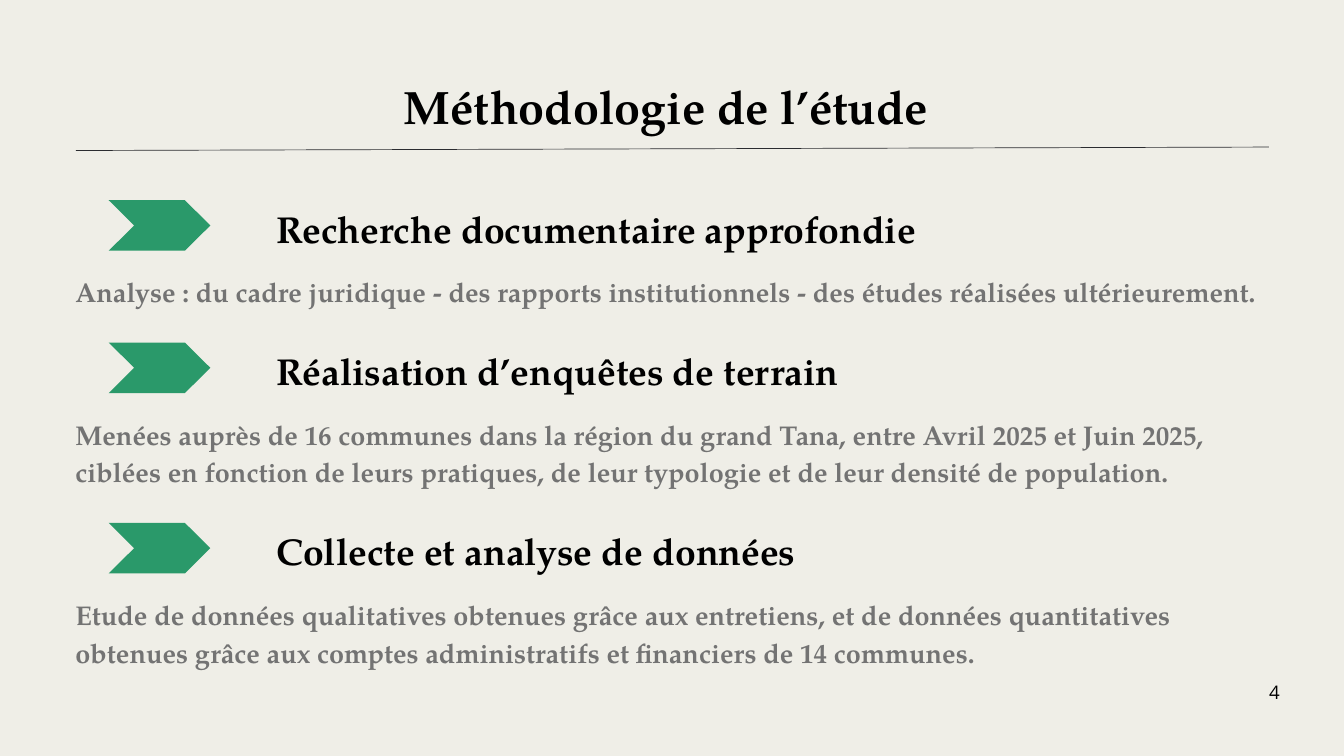
import dataclasses

import pptx
import pptx.dml.color
import pptx.enum.shapes
import pptx.enum.text
import pptx.oxml
import pptx.oxml.ns
import pptx.util
from lxml import etree

Cm = pptx.util.Cm
Pt = pptx.util.Pt
Align = pptx.enum.text.PP_ALIGN


@dataclasses.dataclass(frozen=True)
class Theme:
    paper: str = "EFEEE7"
    green: str = "2A996A"
    rule: str = "2B2C30"
    ink: str = "000000"
    grey: str = "737373"
    serif: str = "TeX Gyre Pagella"
    sans: str = "Open Sans"
    title: float = 50
    head: float = 40
    body: float = 29
    page: float = 20
    lead: float = 1.4


def color(code):
    return pptx.dml.color.RGBColor.from_string(code)


def write(frame, text, *, font, size, ink, lead, bold=True, align=Align.LEFT):
    para = frame.paragraphs[0]
    para.alignment = align
    para.line_spacing = Pt(size * lead)
    run = para.add_run()
    run.text = text
    run.font.name = font
    run.font.size = Pt(size)
    run.font.bold = bold
    run.font.color.rgb = color(ink)


class Board:
    """Draws on one slide in one theme; all lengths are centimetres."""

    def __init__(self, slide, theme):
        self.slide = slide
        self.theme = theme
        fill = slide.background.fill
        fill.solid()
        fill.fore_color.rgb = color(theme.paper)

    def text(self, text, left, top, width, height, wrap=True, **style):
        box = self.slide.shapes.add_textbox(Cm(left), Cm(top), Cm(width), Cm(height))
        frame = box.text_frame
        frame.margin_left = frame.margin_right = 0
        frame.margin_top = frame.margin_bottom = 0
        frame.word_wrap = wrap
        frame.auto_size = pptx.enum.text.MSO_AUTO_SIZE.SHAPE_TO_FIT_TEXT
        look = {"font": self.theme.serif, "ink": self.theme.ink, "lead": self.theme.lead}
        write(frame, text, **(look | style))

    def arrow(self, left, top, width, height):
        """Draw a notched arrow pointing right."""
        ratios = [(0.75, 0), (1, 0.5), (0.75, 1), (0, 1), (0.25, 0.5)]
        points = [(Cm(left + x * width), Cm(top + y * height)) for x, y in ratios]
        path = self.slide.shapes.build_freeform(Cm(left), Cm(top))
        path.add_line_segments(points, close=True)
        shape = path.convert_to_shape()
        shape.shadow.inherit = False
        shape.fill.solid()
        shape.fill.fore_color.rgb = color(self.theme.green)
        shape.line.fill.background()

    def rule(self, start, end):
        kind = pptx.enum.shapes.MSO_CONNECTOR.STRAIGHT
        ends = [Cm(value) for value in (*start, *end)]
        line = self.slide.shapes.add_connector(kind, *ends)
        line.line.color.rgb = color(self.theme.rule)
        line.line.width = Pt(0.75)
        props = line._element.spPr
        etree.SubElement(props, pptx.oxml.ns.qn("a:effectLst"))

    def step(self, top, head, body, lines):
        """Draw an arrow, its heading and the text below."""
        theme = self.theme
        self.arrow(4.11, top, 3.84, 1.91)
        self.text(body, 2.85, top + 2.65, 45.4, 1.4 * lines, size=theme.body, ink=theme.grey)
        self.text(head, 10.44, top - 0.07, 37.5, 1.85, size=theme.head)


STEPS = [
    (7.57, "Recherche documentaire approfondie",
     "Analyse : du cadre juridique - des rapports institutionnels - "
     "des études réalisées ultérieurement.", 1),
    (12.95, "Réalisation d’enquêtes de terrain",
     "Menées auprès de 16 communes dans la région du grand Tana, entre Avril 2025 "
     "et Juin 2025, ciblées en fonction de leurs pratiques, de leur typologie et de "
     "leur densité de population.", 2),
    (19.77, "Collecte et analyse de données",
     "Etude de données qualitatives obtenues grâce aux entretiens, et de données "
     "quantitatives obtenues grâce aux comptes administratifs et financiers de "
     "14 communes.", 2),
]


def main():
    deck = pptx.Presentation()
    deck.slide_width = Cm(50.8)
    deck.slide_height = Cm(28.58)
    theme = Theme()
    board = Board(deck.slides.add_slide(deck.slide_layouts[6]), theme)

    board.text("Méthodologie de l’étude ", 8.13, 2.59, 34.54, 2.36,
               size=theme.title, align=Align.CENTER)
    board.rule((2.87, 5.69), (47.96, 5.56))
    for step in STEPS:
        board.step(*step)
    board.text("4", 47.96, 25.58, 0.43, 0.56, wrap=False, size=theme.page,
               font=theme.sans, bold=False, align=Align.CENTER)

    deck.save("out.pptx")


if __name__ == "__main__":
    main()
